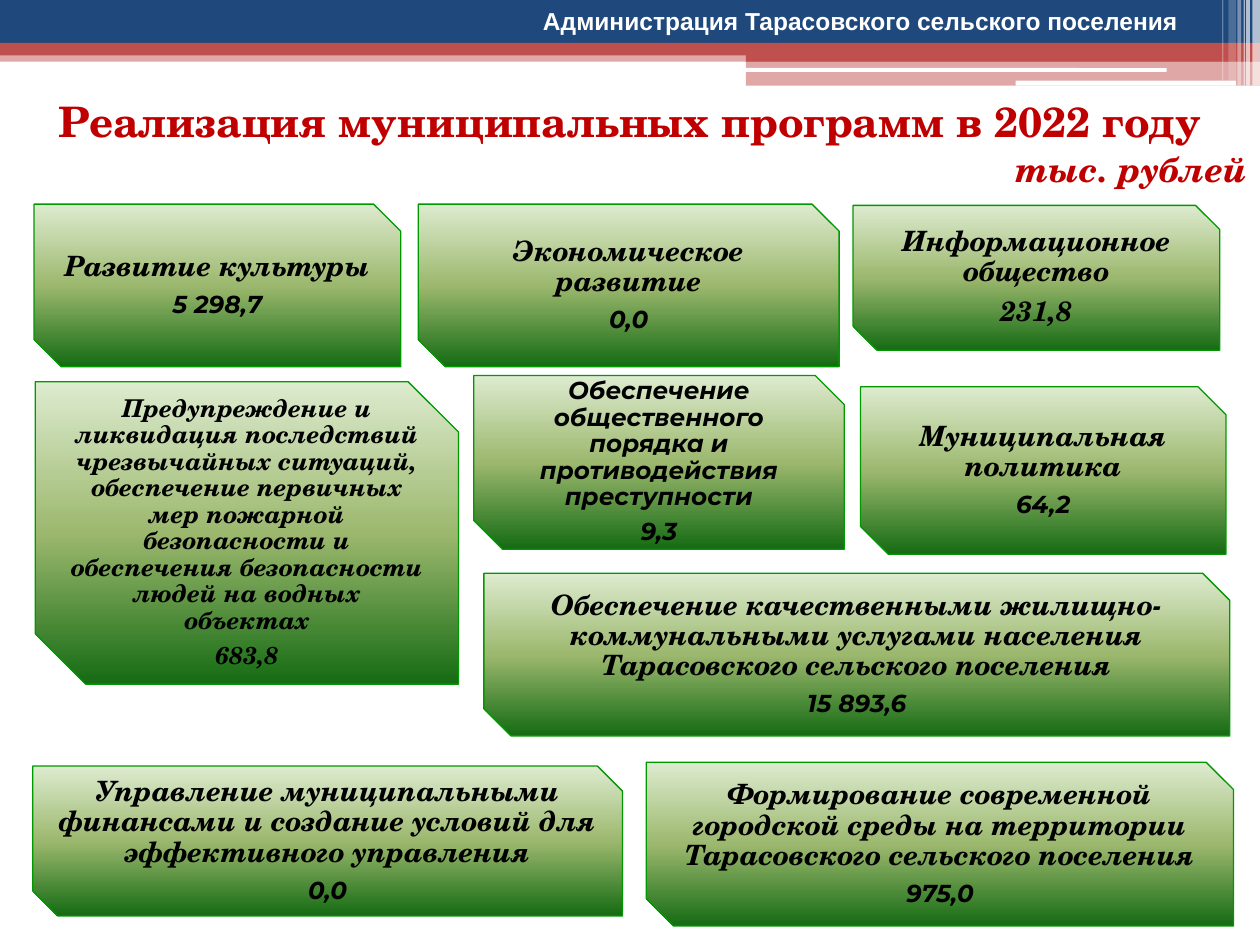
import copy

import lxml.etree
import pptx
import pptx.dml.color
import pptx.enum.shapes
import pptx.enum.text
import pptx.oxml.ns
import pptx.util
from pptx.util import Inches

RGB = pptx.dml.color.RGBColor
SHAPES = pptx.enum.shapes.MSO_SHAPE
ALIGN = pptx.enum.text.PP_ALIGN
ANCHOR = pptx.enum.text.MSO_ANCHOR
AUTO_SIZE = pptx.enum.text.MSO_AUTO_SIZE
qn = pptx.oxml.ns.qn

NAVY = RGB(0x1F, 0x49, 0x7D)
BRICK = RGB(0xC0, 0x50, 0x4D)
WHITE = RGB(0xFF, 0xFF, 0xFF)
BLACK = RGB(0x00, 0x00, 0x00)
RED = RGB(0xC0, 0x00, 0x00)
GREEN_EDGE = RGB(0x00, 0x99, 0x00)
GREEN_STOPS = [(0, RGB(0xDD, 0xEB, 0xCF)), (0.5, RGB(0x9C, 0xB8, 0x6E)),
               (1, RGB(0x15, 0x6B, 0x13))]

SERIF = "TeX Gyre Schola"
SANS = "Montserrat"

# Left, top, width, height, colour, opacity in percent
BARS = [
    (0, 0.4, 10, 0.09, BRICK, 50),
    (0, 0, 10, 0.34, NAVY, 100),
    (0, 0.34, 10, 0.1, BRICK, 100),
    (5.92, 0.39, 4.08, 0.1, BRICK, 100),
    (5.92, 0.48, 4.08, 0.2, BRICK, 50),
]
ROUNDED_BARS = [
    (5.91, 0.54, 3.35, 0.03, WHITE, 100),
    (8.06, 0.64, 1.75, 0.04, WHITE, 100),
]
STRIPES = [
    (9.94, 0, 0.06, 0.68, WHITE, 65),
    (9.89, 0, 0.03, 0.68, WHITE, 65),
    (9.87, 0, 0.01, 0.68, WHITE, 60),
    (9.82, 0, 0.03, 0.68, WHITE, 40),
    (9.75, 0, 0.06, 0.64, WHITE, 20),
    (9.7, 0, 0.01, 0.64, WHITE, 30),
]

# Box, programme name with its font and size, amount with its font and size
PROGRAMMES = [
    ((0.27, 1.62, 2.91, 1.29), ("Развитие культуры", SERIF, 16), ("5 298,7", SANS, 14)),
    ((3.32, 1.62, 3.34, 1.29), ("Экономическое развитие", SERIF, 16), ("0,0", SANS, 14)),
    ((6.77, 1.63, 2.91, 1.15), ("Информационное общество", SERIF, 16), ("231,8", SERIF, 16)),
    ((3.76, 2.98, 2.94, 1.38),
     ("Обеспечение общественного порядка и противодействия преступности", SANS, 14),
     ("9,3", SANS, 14)),
    ((0.28, 3.03, 3.36, 2.4),
     ("Предупреждение и ликвидация последствий чрезвычайных ситуаций, "
      "обеспечение первичных мер пожарной безопасности и обеспечения "
      "безопасности людей на водных объектах", SERIF, 14),
     ("683,8", SERIF, 14)),
    ((6.83, 3.07, 2.9, 1.33), ("Муниципальная политика", SERIF, 16), ("64,2", SANS, 14)),
    ((0.26, 6.08, 4.68, 1.19),
     ("Управление муниципальными финансами и создание условий для "
      "эффективного управления", SERIF, 16),
     ("0,0", SANS, 14)),
    ((5.13, 6.05, 4.66, 1.3),
     ("Формирование современной городской среды на территории "
      "Тарасовского сельского поселения", SERIF, 16),
     ("975,0", SANS, 14)),
    ((3.84, 4.55, 5.92, 1.29),
     ("Обеспечение качественными жилищно-коммунальными услугами населения "
      "Тарасовского сельского поселения", SERIF, 16),
     ("15 893,6", SANS, 14)),
]


def write_span(para, text, font, size, color, align=ALIGN.CENTER, italic=False):
    para.alignment = align
    span = para.add_run()
    span.text = text
    span.font.name = font
    span.font.size = pptx.util.Pt(size)
    span.font.color.rgb = color
    span.font.bold = True
    span.font.italic = italic


def add_bar(page, kind, left, top, width, height, color, opacity):
    bar = page.shapes.add_shape(kind, Inches(left), Inches(top), Inches(width), Inches(height))
    bar.shadow.inherit = False
    bar.line.fill.background()
    bar.fill.solid()
    bar.fill.fore_color.rgb = color
    if opacity < 100:
        tint = bar._element.spPr.find(".//" + qn("a:srgbClr"))
        lxml.etree.SubElement(tint, qn("a:alpha"), val=str(opacity * 1000))


def add_header(page):
    for kind, bars in ((SHAPES.RECTANGLE, BARS), (SHAPES.ROUNDED_RECTANGLE, ROUNDED_BARS),
                       (SHAPES.RECTANGLE, STRIPES)):
        for bar in bars:
            add_bar(page, kind, *bar)
    box = page.shapes.add_textbox(Inches(3.66), Inches(0), Inches(6.34), Inches(0.34))
    box.text_frame.word_wrap = True
    write_span(box.text_frame.paragraphs[0], "Администрация Тарасовского сельского поселения",
               "Arial", 14, WHITE)


def fill_title(title, left, top, width, height):
    title.left, title.top = Inches(left), Inches(top)
    title.width, title.height = Inches(width), Inches(height)
    frame = title.text_frame
    frame.auto_size = AUTO_SIZE.NONE
    frame.vertical_anchor = ANCHOR.TOP
    write_span(frame.paragraphs[0], "Реализация муниципальных программ в 2022 году",
               SERIF, 24, RED)
    unit = frame.add_paragraph()
    unit.space_before = pptx.util.Pt(1)
    write_span(unit, "тыс. рублей", SERIF, 20, RED, ALIGN.RIGHT, italic=True)


def fill_green(shape):
    """Fill the shape with the three-stop gradient, light at the top."""
    shape.fill.gradient()
    shape.fill.gradient_angle = 270
    stop_list = shape._element.spPr.find(".//" + qn("a:gsLst"))
    stop_list.append(copy.deepcopy(stop_list[0]))
    for stop, (position, color) in zip(shape.fill.gradient_stops, GREEN_STOPS):
        stop.position = position
        stop.color.rgb = color


def add_programme(page, place, name, amount):
    card = page.shapes.add_shape(SHAPES.SNIP_2_DIAG_RECTANGLE, *map(Inches, place))
    card.shadow.inherit = False
    fill_green(card)
    card.line.color.rgb = GREEN_EDGE
    card.line.width = pptx.util.Pt(0.75)
    frame = card.text_frame
    frame.word_wrap = True
    frame.vertical_anchor = ANCHOR.MIDDLE
    frame.margin_left = frame.margin_right = Inches(0.07)
    frame.margin_top = frame.margin_bottom = Inches(0.07)
    for para, (text, font, size) in zip((frame.paragraphs[0], frame.add_paragraph()),
                                        (name, amount)):
        para.line_spacing = 0.9
        para.space_after = pptx.util.Pt(0.35 * size)
        write_span(para, text, font, size, BLACK, italic=True)


def main():
    deck = pptx.Presentation()
    deck.slide_width, deck.slide_height = Inches(10), Inches(7.5)
    page = deck.slides.add_slide(deck.slide_layouts[5])
    add_header(page)
    fill_title(page.shapes.title, 0, 0.71, 10, 0.86)
    for programme in PROGRAMMES:
        add_programme(page, *programme)
    deck.save("out.pptx")


if __name__ == "__main__":
    main()
